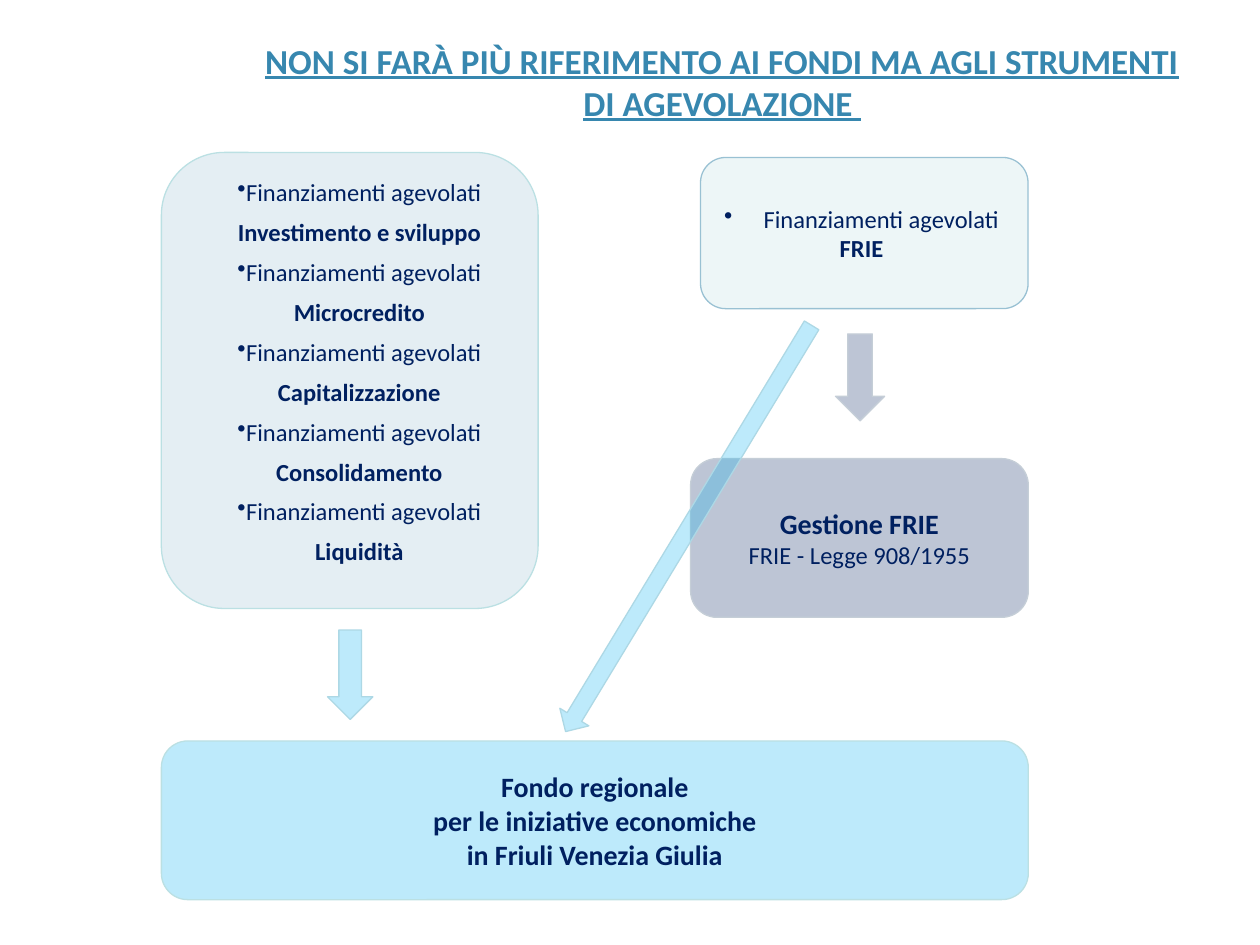
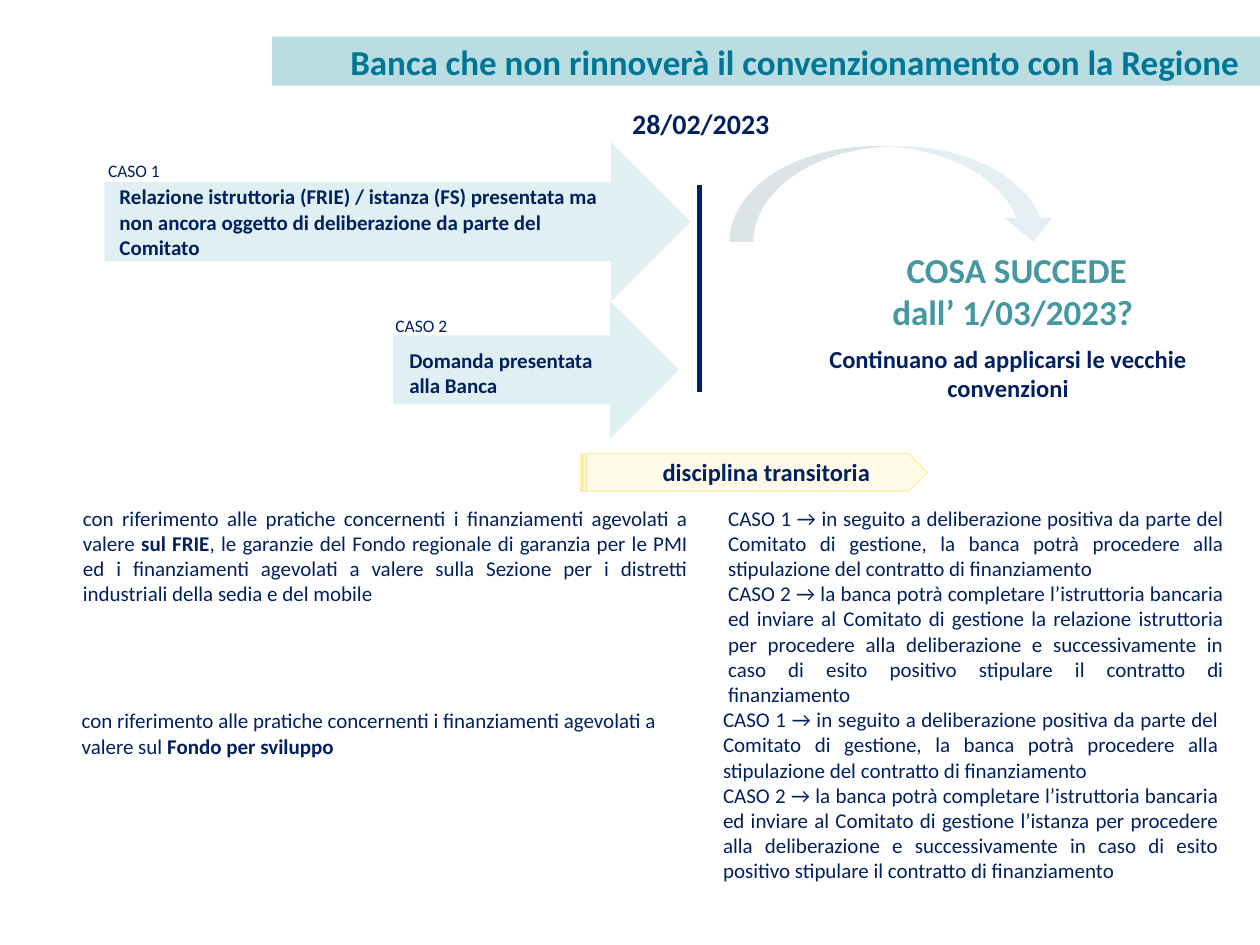
from lxml import etree
from pptx import Presentation
from pptx.dml.color import RGBColor
from pptx.enum import shapes, text
from pptx.oxml import ns
from pptx.util import Pt

FONT = "Calibri"
NAVY = RGBColor(0x00, 0x20, 0x60)
SKY = RGBColor(0x00, 0xB0, 0xF0)
STEEL = RGBColor(0x99, 0xC1, 0xD3)
AQUA = RGBColor(0xBA, 0xDD, 0xE1)
TEAL = RGBColor(0x8A, 0xC6, 0xCD)
YELLOW = RGBColor(0xFF, 0xED, 0xA3)
PALE_EDGE = RGBColor(0xBB, 0xE0, 0xE3)
GREY_EDGE = RGBColor(0xC5, 0xCE, 0xD7)
SKY_EDGE = RGBColor(0xAD, 0xD8, 0xE5)
TITLE_BLUE = RGBColor(0x37, 0x87, 0xAF)
TITLE_TEAL = RGBColor(0x00, 0x76, 0x97)
QUESTION_TEAL = RGBColor(0x45, 0x97, 0xA0)

OPACITY = 26
SHAPE = shapes.MSO_SHAPE
LEFT, CENTER, RIGHT, JUSTIFY = (
    text.PP_ALIGN.LEFT, text.PP_ALIGN.CENTER, text.PP_ALIGN.RIGHT, text.PP_ALIGN.JUSTIFY)
TOP, MIDDLE = text.MSO_ANCHOR.TOP, text.MSO_ANCHOR.MIDDLE


class Deck:
    def __init__(self):
        self.prs = Presentation()
        self.prs.slide_width, self.prs.slide_height = Pt(720), Pt(540)
        self.slide = None

    def new_slide(self):
        self.slide = self.prs.slides.add_slide(self.prs.slide_layouts[5])

    def paragraph(self, tf, runs, size, align=LEFT, color=NAVY, bold=False,
                  underline=None, indent=None, bullet=False, after=0):
        """Add a paragraph; runs is a string or a list of (string, bold)."""
        first = tf.paragraphs[0]
        p = tf.add_paragraph() if first.runs else first
        pPr = p._p.get_or_add_pPr()
        if indent:
            margin, first_line = indent
            pPr.set("marL", str(Pt(margin)))
            pPr.set("indent", str(Pt(first_line)))
        if bullet:
            etree.SubElement(pPr, ns.qn("a:buChar")).set("char", "•")
        p.alignment = align
        if after:
            p.space_after = Pt(after)
        for words, is_bold in [(runs, bold)] if isinstance(runs, str) else runs:
            r = p.add_run()
            r.text = words
            r.font.name, r.font.size = FONT, Pt(size)
            r.font.bold, r.font.underline = is_bold, underline
            r.font.color.rgb = color

    def title(self, words, box, color, align=CENTER, anchor=TOP, band=None, underline=None):
        sp = self.slide.shapes.title
        sp.left, sp.top, sp.width, sp.height = map(Pt, box)
        if band:
            sp.fill.solid()
            sp.fill.fore_color.rgb = band
        tf = sp.text_frame
        tf.auto_size, tf.word_wrap = text.MSO_AUTO_SIZE.NONE, True
        tf.vertical_anchor = anchor
        self.paragraph(tf, words, 20, align, color, True, underline)

    def shape(self, kind, box, fill, edge=None, adjust=(), rotation=0):
        """Add a translucent preset shape."""
        sp = self.slide.shapes.add_shape(kind, *map(Pt, box))
        sp.shadow.inherit = False
        sp.rotation = rotation
        for i, value in enumerate(adjust):
            sp.adjustments[i] = value
        sp.fill.solid()
        sp.fill.fore_color.rgb = fill
        rgb = sp.fill._xPr.find(".//" + ns.qn("a:srgbClr"))
        etree.SubElement(rgb, ns.qn("a:alpha")).set("val", str(OPACITY * 1000))
        if edge:
            sp.line.color.rgb, sp.line.width = edge, Pt(0.75)
        else:
            sp.line.fill.background()
        return sp

    def card(self, box, fill, edge, anchor=MIDDLE):
        """Add a rounded box and return its text frame."""
        tf = self.shape(SHAPE.ROUNDED_RECTANGLE, box, fill, edge).text_frame
        tf.word_wrap, tf.vertical_anchor = False, anchor
        return tf

    def text(self, box, paragraphs, size, **style):
        tf = self.slide.shapes.add_textbox(*map(Pt, box)).text_frame
        tf.word_wrap = True
        for runs in paragraphs:
            self.paragraph(tf, runs, size, **style)

    def line(self, x1, y1, x2, y2, color, width):
        cx = self.slide.shapes.add_connector(
            shapes.MSO_CONNECTOR.STRAIGHT, *map(Pt, (x1, y1, x2, y2)))
        cx.line.color.rgb, cx.line.width = color, Pt(width)
        etree.SubElement(cx._element.spPr, ns.qn("a:effectLst"))


def build_instruments(deck):
    deck.new_slide()
    fund = deck.card((92.2, 423.4, 495.4, 90.7), SKY, PALE_EDGE)
    for words in ("Fondo regionale", " per le iniziative economiche ",
                  "in Friuli Venezia Giulia"):
        deck.paragraph(fund, words, 16, CENTER, bold=True)

    management = deck.card((394.6, 262.1, 193, 90.7), NAVY, GREY_EDGE)
    deck.paragraph(management, "Gestione FRIE", 16, CENTER, bold=True)
    deck.paragraph(management, "FRIE - Legge 908/1955", 14, CENTER)

    loans = "Finanziamenti agevolati "
    instruments = deck.card((92.2, 87.1, 215.3, 260.6), STEEL, PALE_EDGE, TOP)
    for purpose in ("Investimento e sviluppo ", "Microcredito ", "Capitalizzazione ",
                    "Consolidamento ", "Liquidità "):
        for words, is_loans in ((loans, True), (purpose, False)):
            deck.paragraph(instruments, words, 14, CENTER, bold=not is_loans,
                           indent=(0, 14.2), bullet=is_loans, after=6)

    frie = deck.card((400.3, 90, 187.2, 86.4), AQUA, STEEL)
    deck.paragraph(frie, loans, 14, CENTER, indent=(22.5, -22.5), bullet=True)
    deck.paragraph(frie, "FRIE ", 14, CENTER, bold=True)

    for box, fill, edge, rotation in (
            ((187.2, 360, 25.9, 51.1), SKY, SKY_EDGE, 0),
            ((477.4, 190.8, 28.1, 49.7), NAVY, GREY_EDGE, 0),
            ((383.8, 166.3, 19.4, 271.4), SKY, SKY_EDGE, 31.2)):
        deck.shape(SHAPE.DOWN_ARROW, box, fill, edge, (0.5, 0.5), rotation)

    deck.title("NON SI FARÀ PIÙ RIFERIMENTO AI FONDI MA AGLI STRUMENTI DI AGEVOLAZIONE ",
               (139, 18.7, 547.2, 55.4), TITLE_BLUE, underline=True)


def build_transition(deck):
    deck.new_slide()
    deck.title("Banca che non rinnoverà il convenzionamento con la Regione ",
               (155.5, 20.9, 564.5, 28.1), TITLE_TEAL, RIGHT, MIDDLE, band=AQUA)
    deck.text((496.1, 138.2, 169.9, 55.4), ["COSA SUCCEDE dall’ 1/03/2023? "], 20,
              align=CENTER, color=QUESTION_TEAL, bold=True)

    cases = (
        ("CASO 1", (54.7, 87.8, 67.7, 19.4), (59.8, 81.4, 334.8, 90.7),
         (61.2, 101.5, 299.5, 51.1),
         "Relazione istruttoria (FRIE) / istanza (FS) presentata ma non ancora "
         "oggetto di deliberazione da parte del Comitato"),
        ("CASO 2", (218.9, 176.4, 67.7, 19.4), (224.6, 172.1, 163.4, 78.5),
         (226.8, 195.1, 130.3, 36), "Domanda presentata alla Banca"),
    )
    for label, label_box, arrow_box, words_box, words in cases:
        deck.shape(SHAPE.RIGHT_ARROW, arrow_box, TEAL)
        deck.text(words_box, [words], 12, bold=True)
        deck.text(label_box, [label], 10)

    deck.line(399.6, 105.8, 399.6, 223.9, NAVY, 3)
    deck.text((354.2, 57.6, 112.3, 26.6), ["28/02/2023"], 16, bold=True)
    deck.shape(SHAPE.CURVED_DOWN_ARROW, (416.9, 83.5, 187.2, 54.7), STEEL)
    deck.text((445.7, 193, 260.6, 41), ["Continuano ad applicarsi le vecchie convenzioni"],
              14, align=CENTER, bold=True)

    deck.shape(SHAPE.STRIPED_RIGHT_ARROW, (331.9, 259.2, 198, 21.6), YELLOW, YELLOW, (1, 0.5))
    deck.text((371.5, 257.8, 147.6, 24.5), ["disciplina transitoria"], 14, bold=True)

    practices = "con riferimento alle pratiche concernenti i finanziamenti agevolati a valere "
    deck.text((40.3, 285.1, 360, 65.5), [[
        (practices, False), ("sul FRIE", True),
        (", le garanzie del Fondo regionale di garanzia per le PMI ed i finanziamenti "
         "agevolati a valere sulla Sezione per i distretti industriali della sedia e "
         "del mobile", False)]], 12, align=JUSTIFY)
    deck.text((39.6, 401, 360, 36),
              [[(practices + "sul ", False), ("Fondo per sviluppo", True)]], 12)

    for left, top, document in ((409, 285.1, "la relazione istruttoria"),
                                (406.1, 400.3, "l’istanza")):
        deck.text((left, top, 297.4, 108.7), [
            "CASO 1 → in seguito a deliberazione positiva da parte del Comitato di "
            "gestione, la banca potrà procedere alla stipulazione del contratto di "
            "finanziamento ",
            "CASO 2 → la banca potrà completare l’istruttoria bancaria ed inviare al "
            f"Comitato di gestione {document} per procedere alla deliberazione e "
            "successivamente in caso di esito positivo stipulare il contratto di "
            "finanziamento "], 12, align=JUSTIFY)


def main():
    deck = Deck()
    build_instruments(deck)
    build_transition(deck)
    deck.prs.save("out.pptx")


if __name__ == "__main__":
    main()
